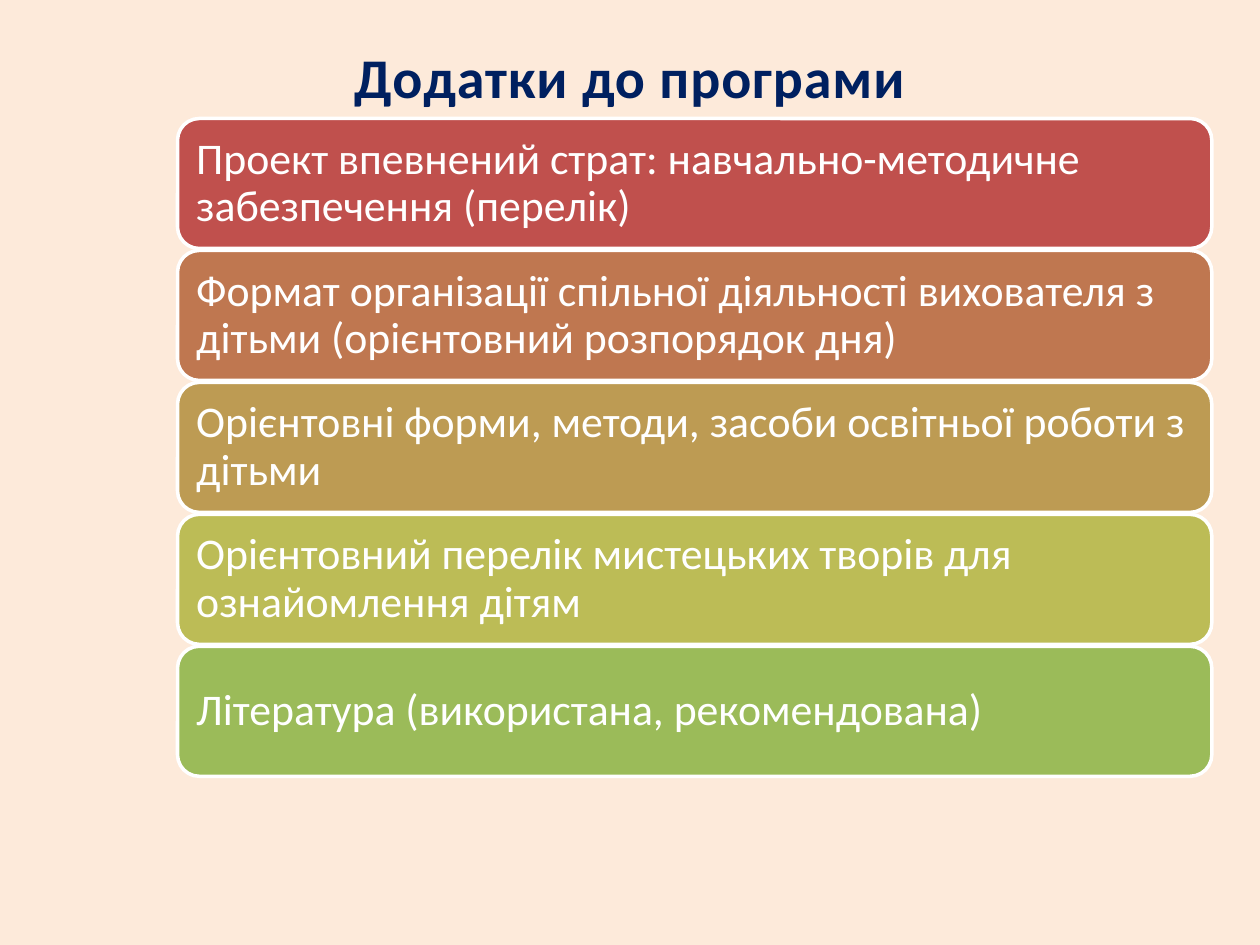
from dataclasses import dataclass

from pptx import Presentation
from pptx.dml.color import RGBColor as RGB
from pptx.enum.shapes import MSO_SHAPE as Shape
from pptx.enum.text import MSO_ANCHOR as Anchor, PP_ALIGN as Align
from pptx.util import Cm, Pt

TITLE = "Додатки до програми"
APPENDICES = [
    ("Проект впевнений страт: навчально-методичне забезпечення (перелік)", "C0504D"),
    ("Формат організації спільної діяльності вихователя з дітьми (орієнтовний розпорядок дня)", "BF7750"),
    ("Орієнтовні форми, методи, засоби освітньої роботи з дітьми", "BD9B53"),
    ("Орієнтовний перелік мистецьких творів для ознайомлення дітям", "BCBC56"),
    ("Література (використана, рекомендована)", "9BBB59"),
]
TITLE_BOX = (1.75, 0.69, 21.89, 1.7)
LEFT, TOP, WIDTH, HEIGHT, PITCH = 3.58, 2.39, 20.85, 2.62, 2.66


@dataclass(frozen=True)
class Theme:
    font: str = "Calibri"
    background: str = "FDEADA"
    title: str = "002060"
    light: str = "FFFFFF"
    title_size: int = 32
    bar_size: int = 25
    line_width: int = 2


THEME = Theme()


def write(sp, text, *, size, color, bold=False, align=Align.LEFT, line=1.0, inset=0.25, tracking=0):
    tf = sp.text_frame
    tf.word_wrap = True
    tf.vertical_anchor = Anchor.MIDDLE
    tf.margin_left = tf.margin_right = tf.margin_top = tf.margin_bottom = Cm(inset)
    p = tf.paragraphs[0]
    p.alignment, p.line_spacing = align, line
    r = p.add_run()
    r.text = text
    r.font.name, r.font.size, r.font.bold = THEME.font, Pt(size), bold
    r.font.color.rgb = RGB.from_string(color)
    if tracking:
        r.font._element.set("spc", str(tracking))


def add_bar(s, top, text, color):
    sp = s.shapes.add_shape(Shape.ROUNDED_RECTANGLE, Cm(LEFT), Cm(top), Cm(WIDTH), Cm(HEIGHT))
    sp.shadow.inherit = False
    sp.fill.solid()
    sp.fill.fore_color.rgb = RGB.from_string(color)
    sp.line.color.rgb = RGB.from_string(THEME.light)
    sp.line.width = Pt(THEME.line_width)
    write(sp, text, size=THEME.bar_size, color=THEME.light, line=0.9)


def main():
    """Build the slide listing the appendices to the programme."""
    prs = Presentation()
    prs.slide_width, prs.slide_height = Cm(25.4), Cm(19.05)
    s = prs.slides.add_slide(prs.slide_layouts[6])
    s.background.fill.solid()
    s.background.fill.fore_color.rgb = RGB.from_string(THEME.background)
    title = s.shapes.add_textbox(*map(Cm, TITLE_BOX))
    write(title, TITLE, size=THEME.title_size, color=THEME.title, bold=True,
          align=Align.CENTER, inset=0, tracking=50)
    for i, (text, color) in enumerate(APPENDICES):
        add_bar(s, TOP + i * PITCH, text, color)
    prs.save("out.pptx")


if __name__ == "__main__":
    main()
